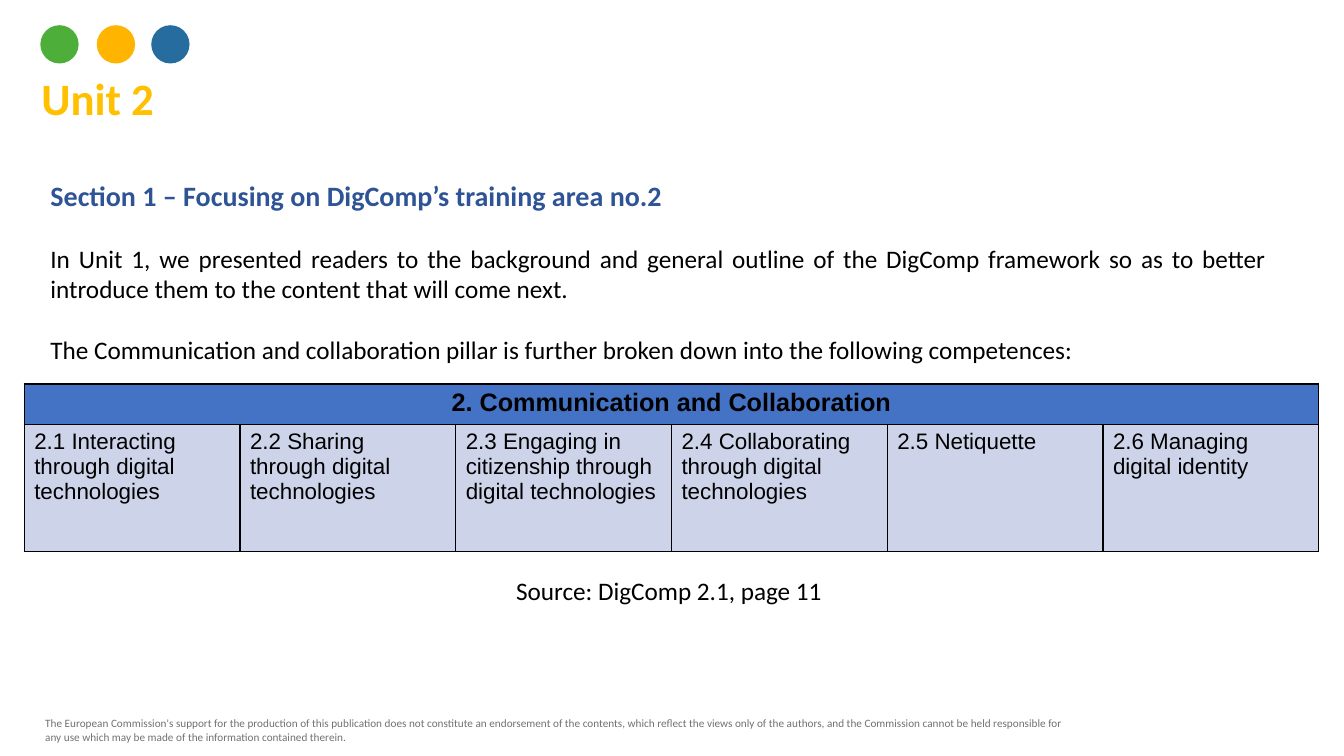
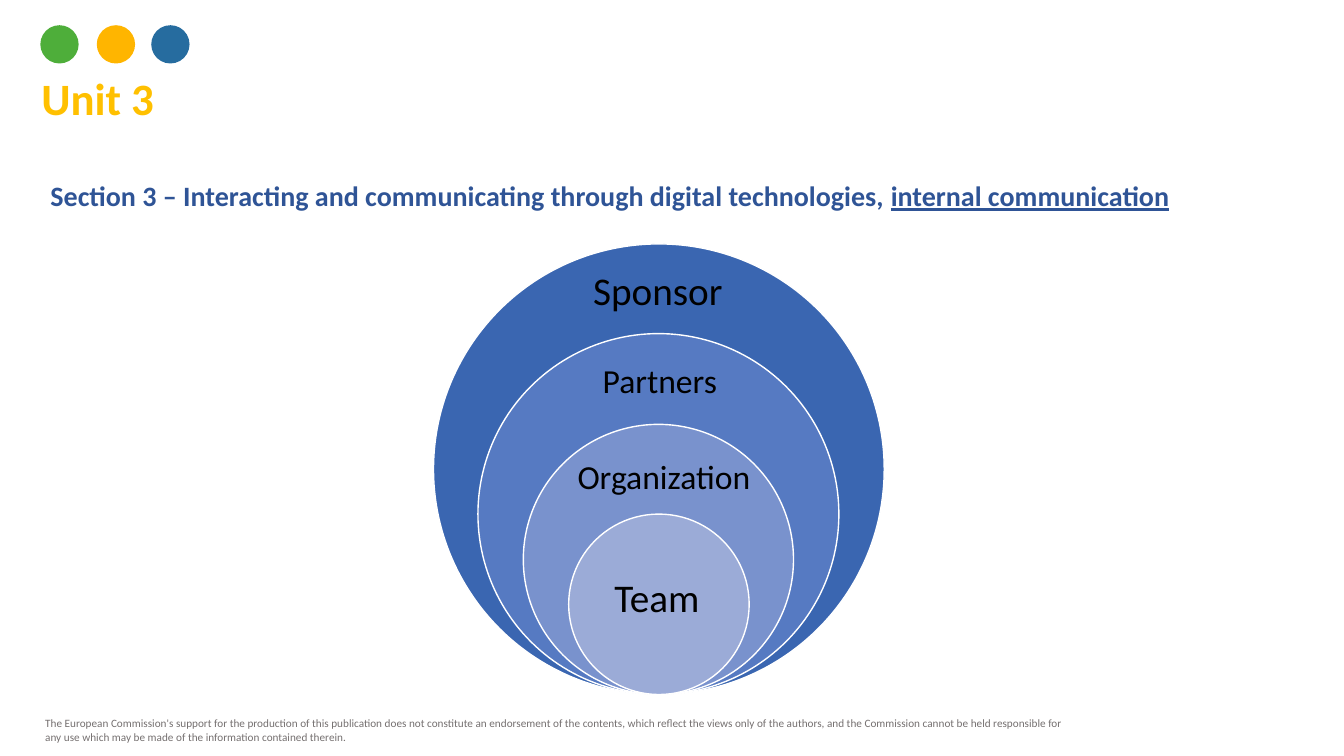
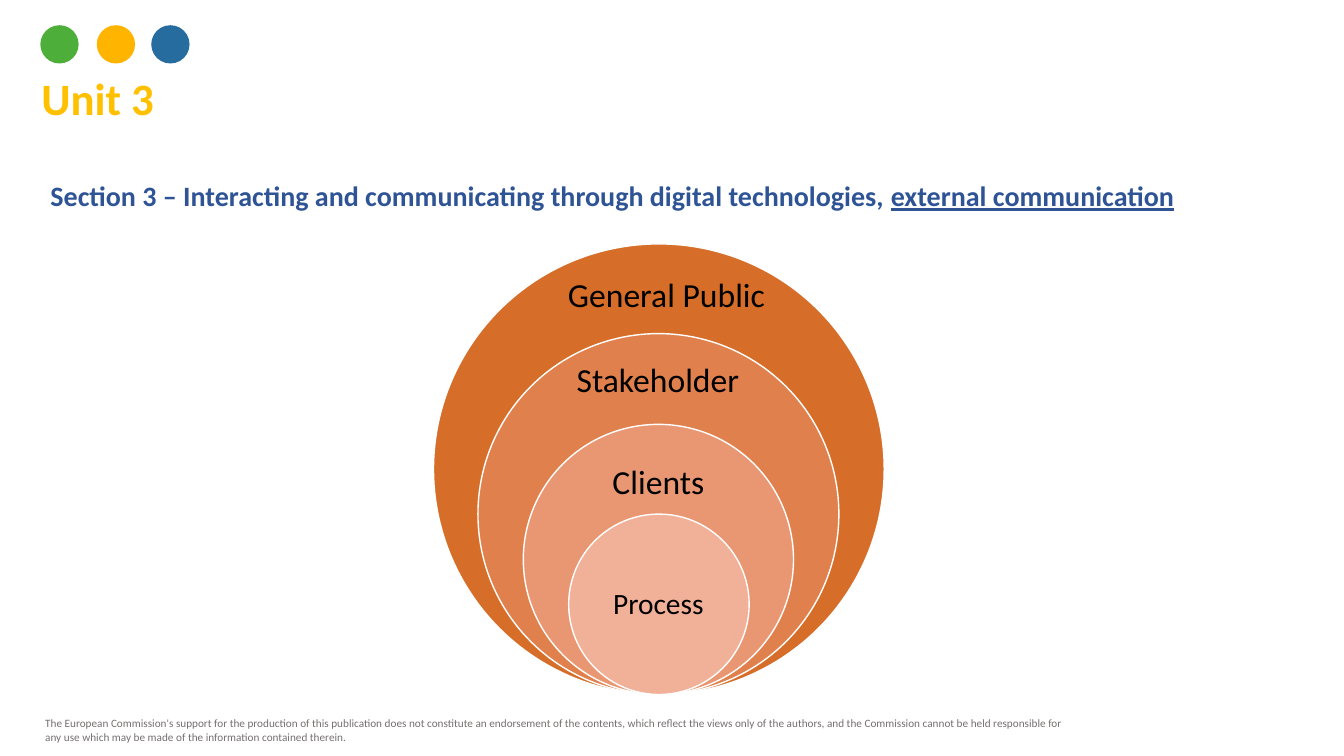
from lxml.etree import SubElement
from pptx import Presentation
from pptx.dml.color import RGBColor
from pptx.enum.shapes import MSO_SHAPE as SHAPE
from pptx.enum.text import MSO_ANCHOR as ANCHOR, MSO_AUTO_SIZE as AUTO, PP_ALIGN as ALIGN
from pptx.oxml.ns import qn
from pptx.util import Pt

PX = 9144

BLACK = RGBColor(0x00, 0x00, 0x00)
WHITE = RGBColor(0xFF, 0xFF, 0xFF)
GREY = RGBColor(0x75, 0x70, 0x70)
GOLD = RGBColor(0xFF, 0xC0, 0x00)
NAVY = RGBColor(0x2F, 0x54, 0x96)
HEADER_FILL = RGBColor(0x44, 0x72, 0xC4)
CELL_FILL = RGBColor(0xCD, 0xD4, 0xEA)
DOTS = [RGBColor(0x4E, 0xAE, 0x3A), RGBColor(0xFF, 0xB5, 0x00), RGBColor(0x26, 0x6C, 0x9F)]
BLUES = [RGBColor(0x3A, 0x66, 0xB1), RGBColor(0x56, 0x7A, 0xC2),
         RGBColor(0x79, 0x92, 0xCD), RGBColor(0x9B, 0xAB, 0xD7)]
ORANGES = [RGBColor(0xD6, 0x6E, 0x29), RGBColor(0xE0, 0x81, 0x4D),
           RGBColor(0xE9, 0x97, 0x72), RGBColor(0xF1, 0xB0, 0x98)]


def style(size, color=BLACK, bold=False, name="Calibri"):
    return dict(size=Pt(size), color=color, bold=bold, name=name)


TITLE = style(32, GOLD, True)
SECTION = style(20, NAVY, True)
SECTION_UNDERLINED = {**SECTION, "underline": True}
BODY = style(18)
FOOTER = style(8, GREY)
HEADER_CELL = style(18, bold=True, name="Arial")
CELL = style(16, name="Arial")

DISCLAIMER = (
    "The European Commission's support for the production of this publication does not "
    "constitute an endorsement of the contents, which reflect the views only of the authors, "
    "and the Commission cannot be held responsible for any use which may be made of the "
    "information contained therein.")
SECTION_3 = "Section 3 – Interacting and communicating through digital technologies, "
COMPETENCES = [
    "2.1 Interacting through digital technologies",
    "2.2 Sharing through digital technologies",
    "2.3 Engaging in citizenship through digital technologies",
    "2.4 Collaborating through digital technologies",
    "2.5 Netiquette",
    "2.6 Managing digital identity",
]


class Deck:
    def __init__(self):
        self.prs = Presentation()
        self.prs.slide_width, self.prs.slide_height = 1333 * PX, 750 * PX
        self.s = None

    def slide(self, title, paragraphs, body_height):
        self.s = self.prs.slides.add_slide(self.prs.slide_layouts[1])
        self.text((35, 706, 1046, 37), [[(DISCLAIMER, FOOTER)]])
        title_sp, body_sp = self.s.placeholders
        self.fill_text(title_sp, (31, 65, 168, 64), [[(title, TITLE)]])
        self.fill_text(body_sp, (40, 172, 1226, body_height), paragraphs, ALIGN.JUSTIFY)
        for x, color in zip((40, 96, 150), DOTS):
            self.circle(x, 25, 38, color)

    def add_paragraphs(self, tf, paragraphs, align=ALIGN.LEFT, gap=22):
        for i, runs in enumerate(paragraphs):
            p = tf.add_paragraph() if i else tf.paragraphs[0]
            pPr = p._p.get_or_add_pPr()
            pPr.set("marL", "0")
            pPr.set("indent", "0")
            SubElement(pPr, qn("a:buNone"))
            p.alignment = align
            p.space_before = Pt(gap if i else 0)
            for text, values in runs:
                r = p.add_run()
                r.text = text
                for key, value in values.items():
                    if key == "color":
                        r.font.color.rgb = value
                    else:
                        setattr(r.font, key, value)

    def fill_text(self, sp, at, paragraphs, align=ALIGN.LEFT):
        for key, value in zip(("left", "top", "width", "height"), at):
            setattr(sp, key, value * PX)
        tf = sp.text_frame
        tf.word_wrap, tf.auto_size, tf.vertical_anchor = True, AUTO.NONE, ANCHOR.TOP
        self.add_paragraphs(tf, paragraphs, align)

    def text(self, at, paragraphs, align=ALIGN.LEFT):
        sp = self.s.shapes.add_textbox(0, 0, PX, PX)
        self.fill_text(sp, at, paragraphs, align)

    def circle(self, x, y, size, color, outline=None):
        sp = self.s.shapes.add_shape(SHAPE.OVAL, x * PX, y * PX, size * PX, size * PX)
        sp.shadow.inherit = False
        sp.fill.solid()
        sp.fill.fore_color.rgb = color
        if outline is None:
            sp.line.fill.background()
        else:
            sp.line.color.rgb = outline
            sp.line.width = Pt(1)

    def nested_circles(self, colors, labels, center=653, bottom=689, largest=447):
        for i, color in enumerate(colors):
            size = round(largest * (1 - i / 5))
            self.circle(center - size // 2, bottom - size, size, color, WHITE)
        for label, size, x, y, width in labels:
            self.text((x, y, width, size * 2), [[(label, style(size))]], ALIGN.CENTER)

    def border(self, cell):
        tcPr = cell._tc.get_or_add_tcPr()
        for side in "LRTB":
            ln = SubElement(tcPr, qn(f"a:ln{side}"), w=str(int(Pt(1))))
            fill = SubElement(ln, qn("a:solidFill"))
            SubElement(fill, qn("a:srgbClr"), val=str(BLACK))

    def table(self, x, y, col_width, row_heights, header, entries):
        cols = len(entries)
        table = self.s.shapes.add_table(len(row_heights), cols, x * PX, y * PX,
                                        col_width * cols * PX, sum(row_heights) * PX).table
        for col in table.columns:
            col.width = col_width * PX
        for row, height in zip(table.rows, row_heights):
            row.height = height * PX
        table.cell(0, 0).merge(table.cell(0, cols - 1))
        for row, color in zip(table.rows, (HEADER_FILL, CELL_FILL)):
            for cell in row.cells:
                self.border(cell)
                cell.fill.solid()
                cell.fill.fore_color.rgb = color
        self.add_paragraphs(table.cell(0, 0).text_frame, [[(header, HEADER_CELL)]], ALIGN.CENTER)
        for i, entry in enumerate(entries):
            self.add_paragraphs(table.cell(1, i).text_frame, [[(entry, CELL)]])


def main():
    deck = Deck()

    deck.slide("Unit 2", [
        [("Section 1 – Focusing on DigComp’s training area no.2", SECTION)],
        [("In Unit 1, we presented readers to the background and general outline of the DigComp "
          "framework so as to better introduce them to the content that will come next.", BODY)],
        [("The Communication and collaboration pillar is further broken down into the following "
          "competences:", BODY)],
    ], 195)
    deck.table(24, 381, 214, (40, 126), "2. Communication and Collaboration", COMPETENCES)
    deck.text((391, 566, 545, 40), [[("Source: DigComp 2.1, page 11", BODY)]], ALIGN.CENTER)

    diagrams = [
        ("internal communication", BLUES, [
            ("Sponsor", 28, 574, 259, 157),
            ("Partners", 24, 533, 352, 243),
            ("Organization", 24, 558, 447, 201),
            ("Team", 28, 573, 564, 157),
        ]),
        ("external communication", ORANGES, [
            ("General Public", 24, 542, 267, 238),
            ("Stakeholder", 24, 560, 351, 185),
            ("Clients", 24, 547, 452, 212),
            ("Process", 21, 590, 576, 126),
        ]),
    ]
    for topic, colors, labels in diagrams:
        deck.slide("Unit 3", [[(SECTION_3, SECTION), (topic, SECTION_UNDERLINED)]], 44)
        deck.nested_circles(colors, labels)

    deck.prs.save("out.pptx")


if __name__ == "__main__":
    main()
